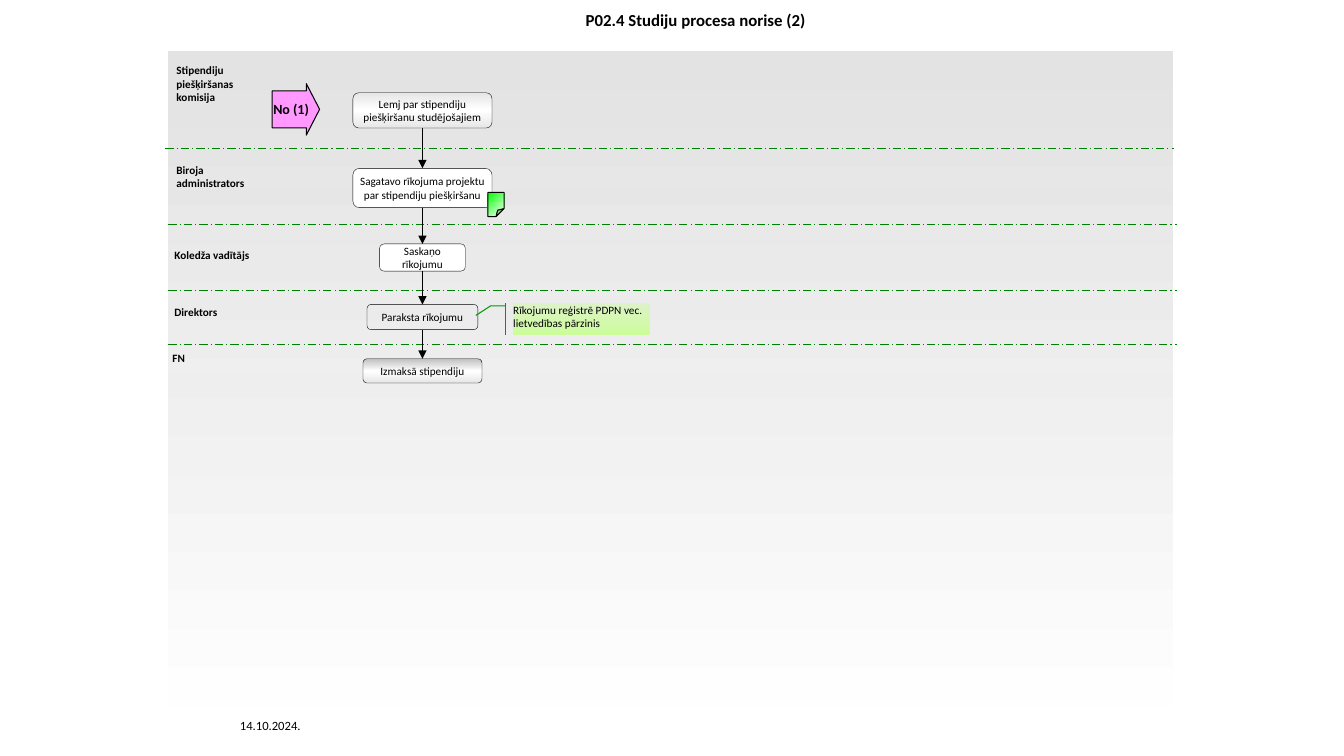
from lxml import etree
from pptx import Presentation
from pptx.dml.color import RGBColor
from pptx.enum.dml import MSO_LINE
from pptx.enum.shapes import MSO_CONNECTOR, MSO_SHAPE
from pptx.enum.text import MSO_ANCHOR, MSO_AUTO_SIZE, PP_ALIGN
from pptx.oxml.ns import qn
from pptx.util import Inches, Pt

BLACK = RGBColor(0x00, 0x00, 0x00)
WHITE = RGBColor(0xFF, 0xFF, 0xFF)
GREY = RGBColor(0xDD, 0xDD, 0xDD)
SILVER = RGBColor(0xBF, 0xBF, 0xBF)
PALE_GREY = RGBColor(0xE6, 0xE6, 0xE6)
PINK = RGBColor(0xFF, 0x99, 0xFF)
LIME = RGBColor(0x00, 0xFF, 0x00)
PALE_LIME = RGBColor(0xCC, 0xFF, 0x99)
DIVIDER_GREEN = RGBColor(0x00, 0x80, 0x00)
CALLOUT_GREEN = RGBColor(0x00, 0x99, 0x00)

FONT = "Calibri"
LEFT, CENTER = PP_ALIGN.LEFT, PP_ALIGN.CENTER
TOP, MIDDLE = MSO_ANCHOR.TOP, MSO_ANCHOR.MIDDLE
STRAIGHT = MSO_CONNECTOR.STRAIGHT
LONG_DASH_DOT = MSO_LINE.LONG_DASH_DOT
SITE_TOP, SITE_BOTTOM = 0, 2

# Gradient stops: position %, colour, opacity %
LANES_FILL = [(0, GREY, 79), (100, WHITE, 100)]
FIRST_FILL = [(0, PALE_GREY, 100), (50, WHITE, 100), (100, PALE_GREY, 100)]
LAST_FILL = [(0, SILVER, 100), (50, WHITE, 100), (100, PALE_GREY, 100)]
NOTE_FILL = [(0, LIME, 100), (100, WHITE, 100)]
CALLOUT_FILL = [(0, PALE_LIME, 40), (100, PALE_LIME, 100)]

TITLE = "P02.4 Studiju procesa norise (2)"
DATE = "14.10.2024."
LANE_LABELS = [  # text, (left, top, width, height)
    ("Stipendiju piešķiršanas\nkomisija", (1.73, 0.62, 0.86, 0.43)),
    ("Biroja administrators", (1.73, 1.61, 0.9, 0.29)),
    ("Koledža vadītājs", (1.71, 2.45, 0.96, 0.16)),
    ("Direktors", (1.71, 3.02, 0.58, 0.16)),
    ("FN", (1.69, 3.48, 0.42, 0.16)),
]
DIVIDERS = [(1.64, 1.47), (1.67, 2.23), (1.67, 2.88), (1.67, 3.42)]  # left, y
DIVIDER_LENGTH = 10
FLOW_X = 4.19
STEPS = [  # text, top, width, height, fill
    ("Lemj par stipendiju piešķiršanu studējošajiem", 0.92, 1.38, 0.35, FIRST_FILL),
    ("Sagatavo rīkojuma projektu par stipendiju piešķiršanu", 1.67, 1.38, 0.39, WHITE),
    ("Saskaņo\nrīkojumu", 2.42, 0.85, 0.27, WHITE),
    ("Paraksta rīkojumu", 3.02, 1.1, 0.25, None),
    ("Izmaksā stipendiju", 3.56, 1.18, 0.24, LAST_FILL),
]
CALLOUT = "Rīkojumu reģistrē PDPN vec. lietvedības pārzinis"

# Shape adjustments, in thousandths of a percent
NOTE_GUIDES = {"adj": 50000}
CALLOUT_GUIDES = {"adj1": 7900, "adj2": -5400, "adj3": 7900,
                  "adj4": -16600, "adj5": 38700, "adj6": -27500}
ARROW_GUIDES = {"adj1": 71900, "adj2": 27900}


def set_gradient(shape, stops, angle):
    shape.fill.solid()
    properties = shape._element.spPr
    gradient = etree.Element(qn("a:gradFill"), rotWithShape="1")
    stop_list = etree.SubElement(gradient, qn("a:gsLst"))
    for position, color, opacity in stops:
        stop = etree.SubElement(stop_list, qn("a:gs"), pos=str(position * 1000))
        color_element = etree.SubElement(stop, qn("a:srgbClr"), val=str(color))
        if opacity < 100:
            etree.SubElement(color_element, qn("a:alpha"), val=str(opacity * 1000))
    etree.SubElement(gradient, qn("a:lin"), ang=str(angle * 60000), scaled="0")
    properties.replace(properties.find(qn("a:solidFill")), gradient)


def set_guides(shape, guides):
    """Replace the adjustment values of a preset shape."""
    geometry = shape._element.spPr.find(qn("a:prstGeom"))
    for old_list in geometry.findall(qn("a:avLst")):
        geometry.remove(old_list)
    guide_list = etree.SubElement(geometry, qn("a:avLst"))
    for name, value in guides.items():
        etree.SubElement(guide_list, qn("a:gd"), name=name, fmla=f"val {value}")


def write(shape, text, size=8, bold=False, align=LEFT, anchor=TOP,
          margins=(0.02, 0.01), wrap=True):
    frame = shape.text_frame
    frame.text = text
    frame.auto_size = MSO_AUTO_SIZE.NONE
    frame.word_wrap = wrap
    frame.vertical_anchor = anchor
    frame.margin_left = frame.margin_right = Inches(margins[0])
    frame.margin_top = frame.margin_bottom = Inches(margins[1])
    for paragraph in frame.paragraphs:
        paragraph.alignment = align
        for run in paragraph.runs:
            run.font.name = FONT
            run.font.size = Pt(size)
            run.font.bold = bold
            run.font.color.rgb = BLACK


def add_shape(slide, kind, box, fill=None, line=None, width=0.75, angle=90,
              guides=None):
    shape = slide.shapes.add_shape(kind, *map(Inches, box))
    shape.shadow.inherit = False
    if guides:
        set_guides(shape, guides)
    if isinstance(fill, list):
        set_gradient(shape, fill, angle)
    elif fill is not None:
        shape.fill.solid()
        shape.fill.fore_color.rgb = fill
    else:
        shape.fill.background()
    if line is None:
        shape.line.fill.background()
    else:
        shape.line.color.rgb = line
        shape.line.width = Pt(width)
    return shape


def add_label(slide, text, box, **style):
    write(slide.shapes.add_textbox(*map(Inches, box)), text, **style)


def add_line(slide, start, end, color):
    connector = slide.shapes.add_connector(STRAIGHT, *map(Inches, start + end))
    connector.line.color.rgb = color
    connector.line.width = Pt(0.75)
    etree.SubElement(connector._element.spPr, qn("a:effectLst"))
    return connector


def add_steps(slide):
    """Stack the steps on one axis and join each to the next with an arrow."""
    previous = None
    for text, top, width, height, fill in STEPS:
        box = (FLOW_X - width / 2, top, width, height)
        step = add_shape(slide, MSO_SHAPE.FLOWCHART_ALTERNATE_PROCESS, box,
                         fill, BLACK, 0.25)
        write(step, text, align=CENTER, anchor=MIDDLE, margins=(0.01, 0.01))
        if previous is not None:
            arrow = add_line(slide, (FLOW_X, top), (FLOW_X, top), BLACK)
            arrow.begin_connect(previous, SITE_BOTTOM)
            arrow.end_connect(step, SITE_TOP)
            etree.SubElement(arrow._element.spPr.find(qn("a:ln")), qn("a:tailEnd"),
                             type="triangle")
        previous = step


def main():
    presentation = Presentation()
    presentation.slide_width = Inches(13.33)
    presentation.slide_height = Inches(7.5)
    slide = presentation.slides.add_slide(presentation.slide_layouts[5])

    title = slide.shapes.title
    title.left, title.top, title.width, title.height = map(
        Inches, (2.37, 0.06, 9.06, 0.28))
    write(title, TITLE, size=12, bold=True, align=CENTER, anchor=MIDDLE)

    add_shape(slide, MSO_SHAPE.RECTANGLE, (1.67, 0.51, 9.96, 6.49), LANES_FILL)
    for text, box in LANE_LABELS:
        add_label(slide, text, box, bold=True)
    for left, y in DIVIDERS:
        divider = add_line(slide, (left, y), (left + DIVIDER_LENGTH, y), DIVIDER_GREEN)
        divider.line.dash_style = LONG_DASH_DOT

    add_steps(slide)
    add_shape(slide, MSO_SHAPE.FOLDED_CORNER, (4.84, 1.91, 0.16, 0.24), NOTE_FILL,
              BLACK, angle=45, guides=NOTE_GUIDES)
    callout = add_shape(slide, MSO_SHAPE.LINE_CALLOUT_2_ACCENT_BAR,
                        (5.09, 3.01, 1.35, 0.31), CALLOUT_FILL, CALLOUT_GREEN,
                        guides=CALLOUT_GUIDES)
    write(callout, CALLOUT, margins=(0, 0))
    source_arrow = add_shape(slide, MSO_SHAPE.RIGHT_ARROW, (2.7, 0.83, 0.47, 0.51),
                             PINK, BLACK, guides=ARROW_GUIDES)
    write(source_arrow, "No (1)", size=10, bold=True, align=CENTER, anchor=MIDDLE,
          margins=(0.1, 0.05), wrap=False)
    add_label(slide, DATE, (2.36, 7.11, 0.95, 0.18), size=9)
    presentation.save("out.pptx")


if __name__ == "__main__":
    main()
